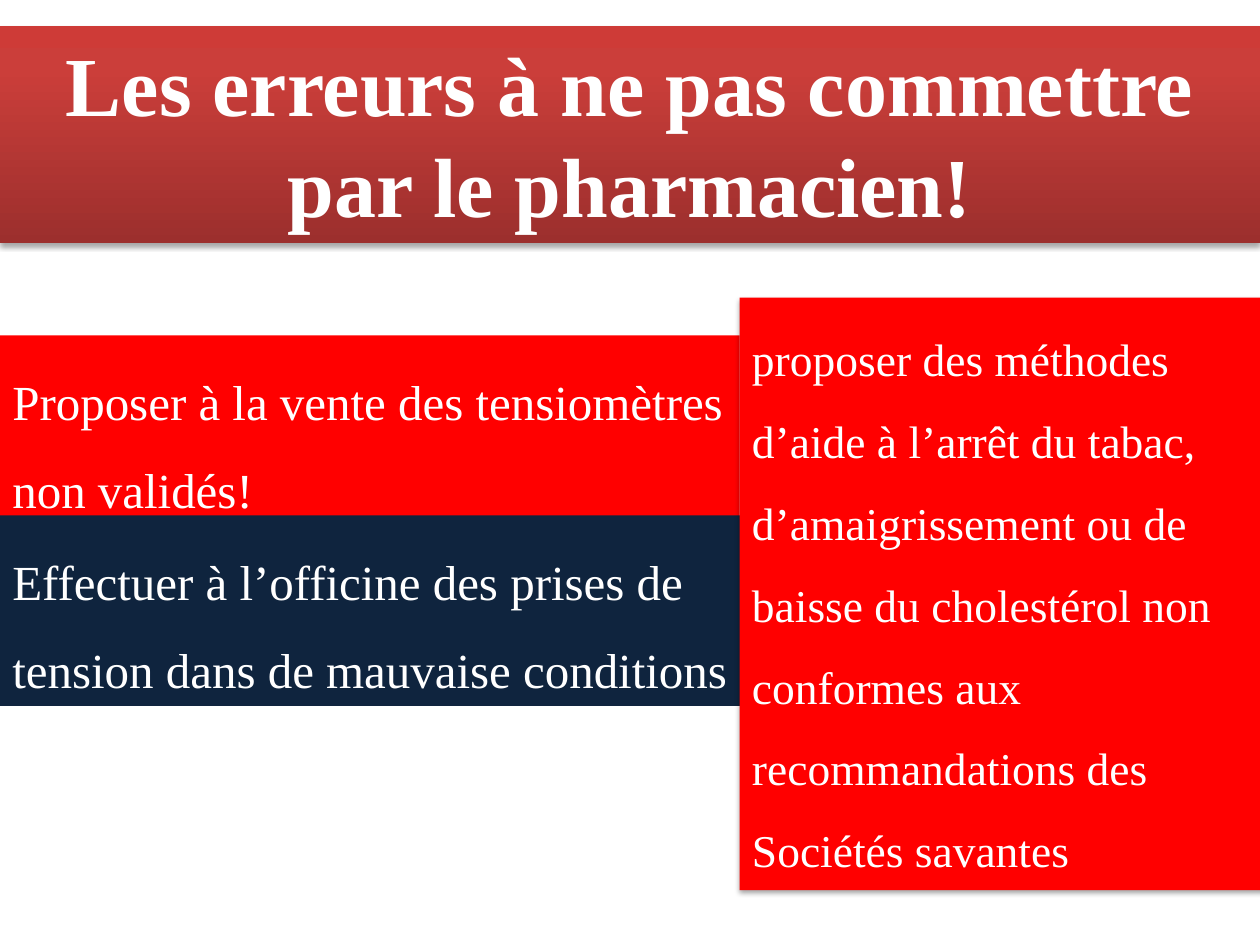
from copy import deepcopy
from dataclasses import dataclass

from lxml.etree import SubElement
from pptx import Presentation
from pptx.dml.color import RGBColor
from pptx.enum.shapes import MSO_SHAPE
from pptx.enum.text import MSO_ANCHOR, MSO_AUTO_SIZE, PP_ALIGN
from pptx.oxml.ns import qn
from pptx.util import Inches, Pt


@dataclass(frozen=True)
class Theme:
    """Colours, font and type sizes of the slide."""
    font: str = "Times New Roman"
    text: str = "FFFFFF"
    red: str = "FF0000"
    navy: str = "0F243E"
    banner: tuple = ((0, "9C2F2D"), (0.8, "CB3E3A"), (1, "CE3B37"))
    title: int = 48
    body: int = 28
    side: int = 26


THEME = Theme()
WIDTH, HEIGHT = Inches(10), Inches(7.5)


def share(x, y, w, h):
    """Turn shares of the slide's size into a box."""
    return int(x * WIDTH), int(y * HEIGHT), int(w * WIDTH), int(h * HEIGHT)


def add_shadow(sp):
    """Give a shape a soft shadow below it."""
    effects = sp._element.spPr.find(qn("a:effectLst"))
    shadow = SubElement(effects, qn("a:outerShdw"), blurRad=str(Pt(3.1)),
                        dist=str(Pt(1.8)), dir="5400000", rotWithShape="0")
    color = SubElement(shadow, qn("a:srgbClr"), val="000000")
    SubElement(color, qn("a:alpha"), val="35000")


def fill_gradient(sp, stops):
    """Fill a shape with a gradient that rises from bottom to top."""
    sp.fill.gradient()
    sp.fill.gradient_angle = 90
    stop_list = sp._element.spPr.find(qn("a:gradFill")).find(qn("a:gsLst"))
    while len(stop_list) < len(stops):
        stop_list.append(deepcopy(stop_list[-1]))
    for stop, (position, color) in zip(sp.fill.gradient_stops, stops):
        stop.position = position
        stop.color.rgb = RGBColor.from_string(color)


def add_panel(s, box, lines, size, color=None, shadow=False, spacing=1.5,
              align=PP_ALIGN.LEFT, bold=False):
    """Place a rectangle with one paragraph for each line."""
    sp = s.shapes.add_shape(MSO_SHAPE.RECTANGLE, *box)
    sp.shadow.inherit = False
    sp.line.fill.background()
    if color:
        sp.fill.solid()
        sp.fill.fore_color.rgb = RGBColor.from_string(color)
    if shadow:
        add_shadow(sp)
    tf = sp.text_frame
    tf.word_wrap = True
    tf.auto_size = MSO_AUTO_SIZE.SHAPE_TO_FIT_TEXT
    tf.vertical_anchor = MSO_ANCHOR.TOP
    tf.text = "\n".join(lines)
    for p in tf.paragraphs:
        p.alignment = align
        p.line_spacing = spacing
        p.font.name = THEME.font
        p.font.size = Pt(size)
        p.font.bold = bold
        p.font.color.rgb = RGBColor.from_string(THEME.text)
    return sp


def add_banner(s, box):
    """Place the title banner."""
    sp = add_panel(s, box, ["Les erreurs à ne pas commettre par le pharmacien!"],
                   THEME.title, shadow=True, spacing=1.0,
                   align=PP_ALIGN.CENTER, bold=True)
    fill_gradient(sp, THEME.banner)


def add_tension_panels(s, box):
    """Stack the two blood pressure errors, the second over the first."""
    x, y, w, h = box
    step = int(h * 0.486)
    height = h - step
    add_panel(s, (x, y, w, height),
              ["Proposer à la vente des tensiomètres", "non validés!"],
              THEME.body, THEME.red)
    add_panel(s, (x, y + step, int(w * 1.007), height),
              ["Effectuer à l’officine des prises de tension dans de "
               "mauvaise conditions"], THEME.body, THEME.navy)


def add_methods_panel(s, box):
    """Place the error about methods that break the recommendations."""
    add_panel(s, box,
              ["proposer des méthodes d’aide à l’arrêt du tabac, "
               "d’amaigrissement ou de baisse du cholestérol non conformes "
               "aux recommandations des", "Sociétés savantes"],
              THEME.side, THEME.red, shadow=True)


def main():
    """Build the slide and save it."""
    prs = Presentation()
    prs.slide_width, prs.slide_height = WIDTH, HEIGHT
    s = prs.slides.add_slide(prs.slide_layouts[6])
    split = 0.587
    add_banner(s, share(0, 0.028, 1, 0.229))
    add_tension_panels(s, share(0, 0.355, split, 0.392))
    add_methods_panel(s, share(split, 0.315, 0.433, 0.627))
    prs.save("out.pptx")


if __name__ == "__main__":
    main()
